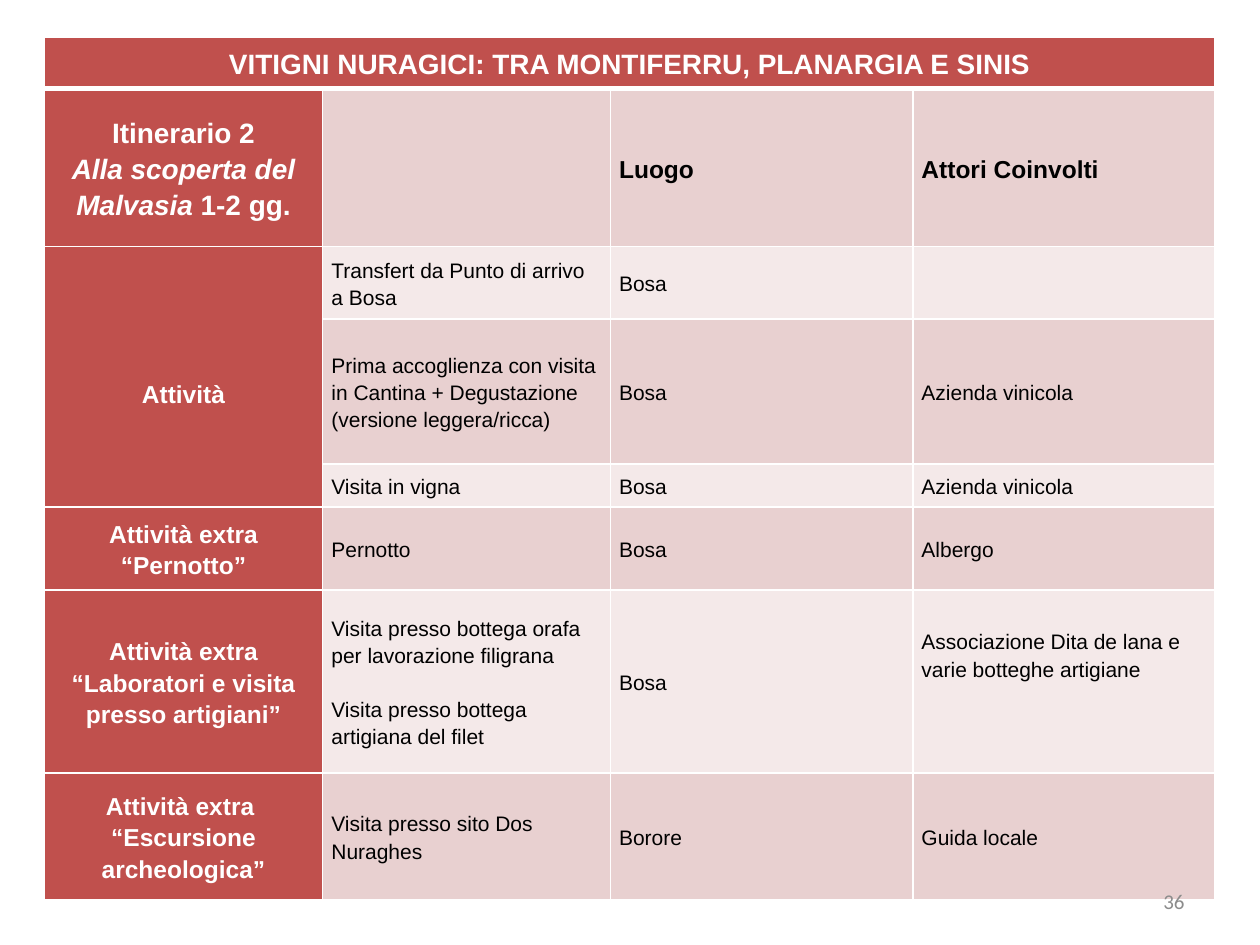
"""Build the itinerary table slide for the Malvasia wine route."""
from dataclasses import dataclass

from lxml import etree
from pptx import Presentation
from pptx.dml.color import RGBColor
from pptx.enum.text import MSO_ANCHOR, PP_ALIGN
from pptx.oxml.ns import qn
from pptx.util import Pt

LEFT, CENTER, RIGHT = PP_ALIGN.LEFT, PP_ALIGN.CENTER, PP_ALIGN.RIGHT
MIDDLE = MSO_ANCHOR.MIDDLE


@dataclass(frozen=True)
class Theme:
    """Colours, fonts and type sizes of the slide."""
    accent: str = "C0504D"
    band_dark: str = "E8D0D0"
    band_light: str = "F4E9E9"
    white: str = "FFFFFF"
    black: str = "000000"
    grey: str = "8C8C8C"
    font: str = "Arial"
    number_font: str = "Calibri"
    title: float = 16
    heading: float = 14
    body: float = 12
    spacing: float = 1.15


@dataclass(frozen=True)
class Run:
    """A piece of text, upright or italic."""
    text: str
    italic: bool = False


@dataclass(frozen=True)
class Cell:
    """Paragraphs of a table cell with their format."""
    paragraphs: tuple[tuple[Run, ...], ...] = ()
    fill: str = ""
    color: str = ""
    size: float = 0
    bold: bool = False
    align: PP_ALIGN = LEFT
    gap: float = 0
    top: float = 0
    bottom: float = 0


T = Theme()
COLS = (159, 164.4, 172.8, 172.8)
ROWS = (29.5, 90.5, 41.2, 83, 24.5, 47.6, 104.4, 72.6)
BANDS = (T.band_dark, T.band_light)


def lines(*texts: str) -> tuple[tuple[Run, ...], ...]:
    """Turn each text into a paragraph of one run."""
    return tuple((Run(text),) for text in texts)


def label(*texts: str, **fmt) -> Cell:
    """Describe a white bold heading on the accent colour."""
    look = dict(fill=T.accent, color=T.white, size=T.heading, bold=True, align=CENTER)
    return Cell(lines(*texts), **{**look, **fmt})


def column_head(*texts: str) -> Cell:
    """Describe a bold black column heading."""
    return Cell(lines(*texts), color=T.black, size=T.heading, bold=True)


def body(*texts: str, **fmt) -> Cell:
    """Describe a plain body cell."""
    return Cell(lines(*texts), color=T.black, size=T.body, **fmt)


ITINERARY = Cell(
    (
        (Run("Itinerario 2"),),
        (Run("Alla scoperta del Malvasia ", True), Run("1-2 gg.")),
    ),
    fill=T.accent, color=T.white, size=T.title, bold=True, align=CENTER,
)

GRID = (
    (label("VITIGNI NURAGICI: TRA MONTIFERRU, PLANARGIA E SINIS", size=T.title),),
    (ITINERARY, Cell(), column_head("Luogo"), column_head("Attori Coinvolti")),
    (label("Attività", top=18.5), body("Transfert da Punto di arrivo a Bosa"),
     body("Bosa"), Cell()),
    (None, body("Prima accoglienza con visita in Cantina + Degustazione (versione leggera/ricca)"),
     body("Bosa"), body("Azienda vinicola")),
    (None, body("Visita in vigna"), body("Bosa"), body("Azienda vinicola")),
    (label("Attività extra", "“Pernotto”"), body("Pernotto"), body("Bosa"), body("Albergo")),
    (label("Attività extra “Laboratori e visita presso artigiani”"),
     body("Visita presso bottega orafa per lavorazione filigrana",
          "Visita presso bottega artigiana del filet", gap=15.4),
     body("Bosa"),
     body("Associazione Dita de lana e varie botteghe artigiane", bottom=31)),
    (label("Attività extra ", "“Escursione archeologica”"),
     body("Visita presso sito Dos Nuraghes"), body("Borore"), body("Guida locale")),
)


def add_text(p, text: str, *, size: float, color: str, font: str = T.font,
             bold: bool = False, italic: bool = False) -> None:
    """Append a formatted run to a paragraph."""
    r = p.add_run()
    r.text = text
    r.font.name, r.font.size = font, Pt(size)
    r.font.bold, r.font.italic = bold, italic
    r.font.color.rgb = RGBColor.from_string(color)


def set_borders(cell, bottom: float = 1) -> None:
    """Draw white lines on the four sides of a cell."""
    tc_pr = cell._tc.get_or_add_tcPr()
    for side, width in (("L", 1), ("R", 1), ("T", 1), ("B", bottom)):
        ln = etree.SubElement(tc_pr, qn(f"a:ln{side}"), w=str(Pt(width)))
        fill = etree.SubElement(ln, qn("a:solidFill"))
        etree.SubElement(fill, qn("a:srgbClr"), val=T.white)


def fill_cell(cell, data: Cell) -> None:
    """Write the paragraphs of a cell."""
    cell.vertical_anchor = MIDDLE
    cell.margin_left = cell.margin_right = Pt(5)
    cell.margin_top, cell.margin_bottom = Pt(data.top), Pt(data.bottom)
    tf = cell.text_frame
    for i, runs in enumerate(data.paragraphs):
        p = tf.add_paragraph() if i else tf.paragraphs[0]
        p.alignment, p.line_spacing = data.align, T.spacing
        if i and data.gap:
            p.space_before = Pt(data.gap)
        for run in runs:
            add_text(p, run.text, size=data.size, color=data.color,
                     bold=data.bold, italic=run.italic)


def add_itinerary(slide) -> None:
    """Add the itinerary table."""
    frame = slide.shapes.add_table(len(ROWS), len(COLS), Pt(25.4), Pt(21),
                                   Pt(sum(COLS)), Pt(sum(ROWS)))
    table = frame.table
    table.first_row = table.horz_banding = False
    for column, width in zip(table.columns, COLS):
        column.width = Pt(width)
    for row, height in zip(table.rows, ROWS):
        row.height = Pt(height)
    table.cell(0, 0).merge(table.cell(0, 3))
    table.cell(2, 0).merge(table.cell(4, 0))
    for i in range(len(ROWS)):
        for j in range(len(COLS)):
            cell = table.cell(i, j)
            data = GRID[i][j] if j < len(GRID[i]) else None
            set_borders(cell, bottom=1 if i else 3)
            color = T.accent if i == 0 or j == 0 else BANDS[(i - 1) % 2]
            cell.fill.solid()
            cell.fill.fore_color.rgb = RGBColor.from_string(color)
            if data:
                fill_cell(cell, data)


def add_page_number(slide, number: str) -> None:
    """Add the page number at the bottom right."""
    tf = slide.shapes.add_textbox(Pt(516), Pt(500.5), Pt(168), Pt(28.8)).text_frame
    tf.word_wrap, tf.vertical_anchor = True, MIDDLE
    p = tf.paragraphs[0]
    p.alignment = RIGHT
    add_text(p, number, size=T.body, color=T.grey, font=T.number_font)


def main() -> None:
    """Build and save the presentation."""
    prs = Presentation()
    prs.slide_width, prs.slide_height = Pt(720), Pt(540)
    s = prs.slides.add_slide(prs.slide_layouts[6])
    add_itinerary(s)
    add_page_number(s, "36")
    prs.save("out.pptx")


if __name__ == "__main__":
    main()
